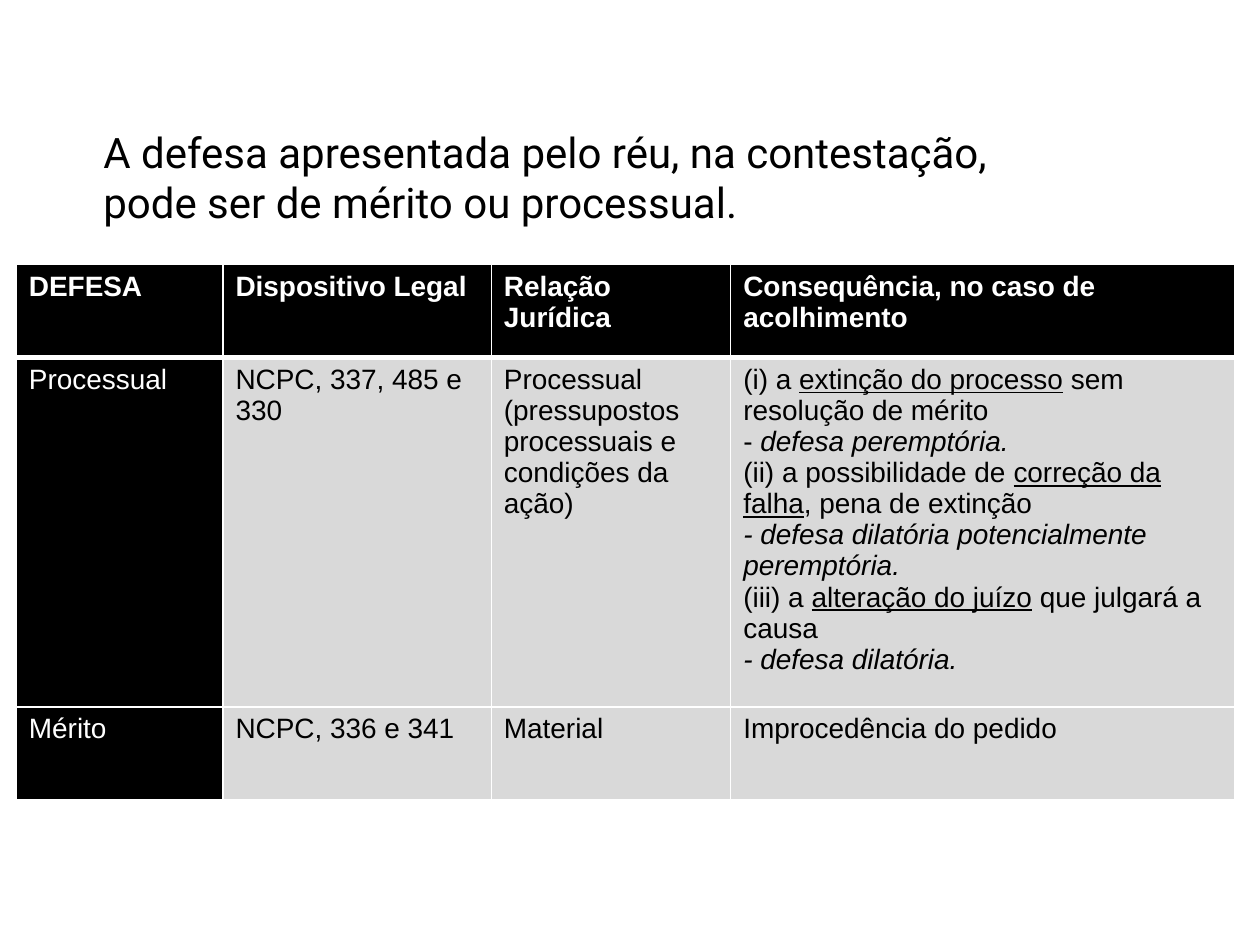
from dataclasses import dataclass

from lxml.etree import SubElement
from pptx import Presentation
from pptx.dml.color import RGBColor
from pptx.enum.text import MSO_ANCHOR as Anchor, MSO_AUTO_SIZE as AutoSize, PP_ALIGN as Align
from pptx.oxml.ns import qn
from pptx.util import Inches, Pt

BLACK = RGBColor(0x00, 0x00, 0x00)
WHITE = RGBColor(0xFF, 0xFF, 0xFF)
GRAY = RGBColor(0xD9, 0xD9, 0xD9)

SLIDE_WIDTH, SLIDE_HEIGHT = Inches(10), Inches(7.5)
GRID_COLUMNS, GRID_ROWS = 1000, 750
TABLE_COLUMNS = (164, 213, 190, 400)
TABLE_ROWS = (74, 277, 74)
THIN, THICK = Pt(1), Pt(3)


@dataclass(frozen=True)
class Span:
    text: str
    underline: bool = False
    italic: bool = False


@dataclass(frozen=True)
class Area:
    column: int
    row: int
    columns: int
    rows: int


TITLE = "A defesa apresentada pelo réu, na contestação, pode ser de mérito ou processual."
TITLE_AREA = Area(72, 95, 764, 91)
TABLE_AREA = Area(13, 210, sum(TABLE_COLUMNS), sum(TABLE_ROWS))

CONSEQUENCES = (
    (Span("(i) a "), Span("extinção do processo", underline=True), Span(" sem resolução de mérito")),
    (Span("- "), Span("defesa peremptória.", italic=True)),
    (Span("(ii) a possibilidade de "), Span("correção da falha", underline=True), Span(", pena de extinção")),
    (Span("- defesa dilatória potencialmente peremptória.", italic=True),),
    (Span("(iii) a "), Span("alteração do juízo", underline=True), Span(" que julgará a causa")),
    (Span("- defesa dilatória.", italic=True),),
)

DEFENSES = (
    ("DEFESA", "Dispositivo Legal", "Relação Jurídica", "Consequência, no caso de acolhimento"),
    (
        "Processual",
        "NCPC, 337, 485 e 330",
        "Processual (pressupostos processuais e condições da ação)",
        CONSEQUENCES,
    ),
    ("Mérito", "NCPC, 336 e 341", "Material", "Improcedência do pedido"),
)


def across(columns: int) -> int:
    """Turn grid columns into a length."""
    return SLIDE_WIDTH * columns // GRID_COLUMNS


def down(rows: int) -> int:
    """Turn grid rows into a length."""
    return SLIDE_HEIGHT * rows // GRID_ROWS


def bounds(area: Area) -> tuple[int, int, int, int]:
    """Return left, top, width and height of an area."""
    return across(area.column), down(area.row), across(area.columns), down(area.rows)


def draw_title(slide, text: str, area: Area) -> None:
    """Place and format the title placeholder."""
    title = slide.shapes.title
    title.left, title.top, title.width, title.height = bounds(area)
    frame = title.text_frame
    frame.text = text
    frame.word_wrap = True
    frame.auto_size = AutoSize.SHAPE_TO_FIT_TEXT
    frame.vertical_anchor = Anchor.TOP
    paragraph = frame.paragraphs[0]
    paragraph.alignment = Align.LEFT
    font = paragraph.runs[0].font
    font.name, font.size = "Roboto", Pt(24)
    font.color.rgb = BLACK


def add_borders(cell, top: int, bottom: int) -> None:
    """Give a cell white borders on its four sides."""
    properties = cell._tc.get_or_add_tcPr()
    for side, width in (("L", THIN), ("R", THIN), ("T", top), ("B", bottom)):
        line = SubElement(properties, qn(f"a:ln{side}"), w=str(width))
        fill = SubElement(line, qn("a:solidFill"))
        SubElement(fill, qn("a:srgbClr"), val=str(WHITE))


def write_cell(cell, content: str | tuple, color: RGBColor, bold: bool) -> None:
    """Write plain text or paragraphs of spans into a cell."""
    lines = ((Span(content),),) if isinstance(content, str) else content
    frame = cell.text_frame
    for index, spans in enumerate(lines):
        paragraph = frame.add_paragraph() if index else frame.paragraphs[0]
        for span in spans:
            run = paragraph.add_run()
            run.text = span.text
            font = run.font
            font.name, font.size, font.bold = "Arial", Pt(16), bold
            font.underline, font.italic = span.underline, span.italic
            font.color.rgb = color


def draw_table(slide, contents: tuple, area: Area) -> None:
    """Draw the table of defenses with a dark header row and first column."""
    table = slide.shapes.add_table(len(TABLE_ROWS), len(TABLE_COLUMNS), *bounds(area)).table
    for column, columns in zip(table.columns, TABLE_COLUMNS):
        column.width = across(columns)
    for row_index, (row, rows) in enumerate(zip(table.rows, TABLE_ROWS)):
        row.height = down(rows)
        header = row_index == 0
        for column_index, cell in enumerate(row.cells):
            dark = header or column_index == 0
            add_borders(cell, THICK if row_index == 1 else THIN, THICK if header else THIN)
            cell.fill.solid()
            cell.fill.fore_color.rgb = BLACK if dark else GRAY
            write_cell(cell, contents[row_index][column_index], WHITE if dark else BLACK, header)


def main() -> None:
    """Build and save the slide."""
    presentation = Presentation()
    presentation.slide_width, presentation.slide_height = SLIDE_WIDTH, SLIDE_HEIGHT
    slide = presentation.slides.add_slide(presentation.slide_layouts[5])
    draw_title(slide, TITLE, TITLE_AREA)
    draw_table(slide, DEFENSES, TABLE_AREA)
    presentation.save("out.pptx")


if __name__ == "__main__":
    main()
